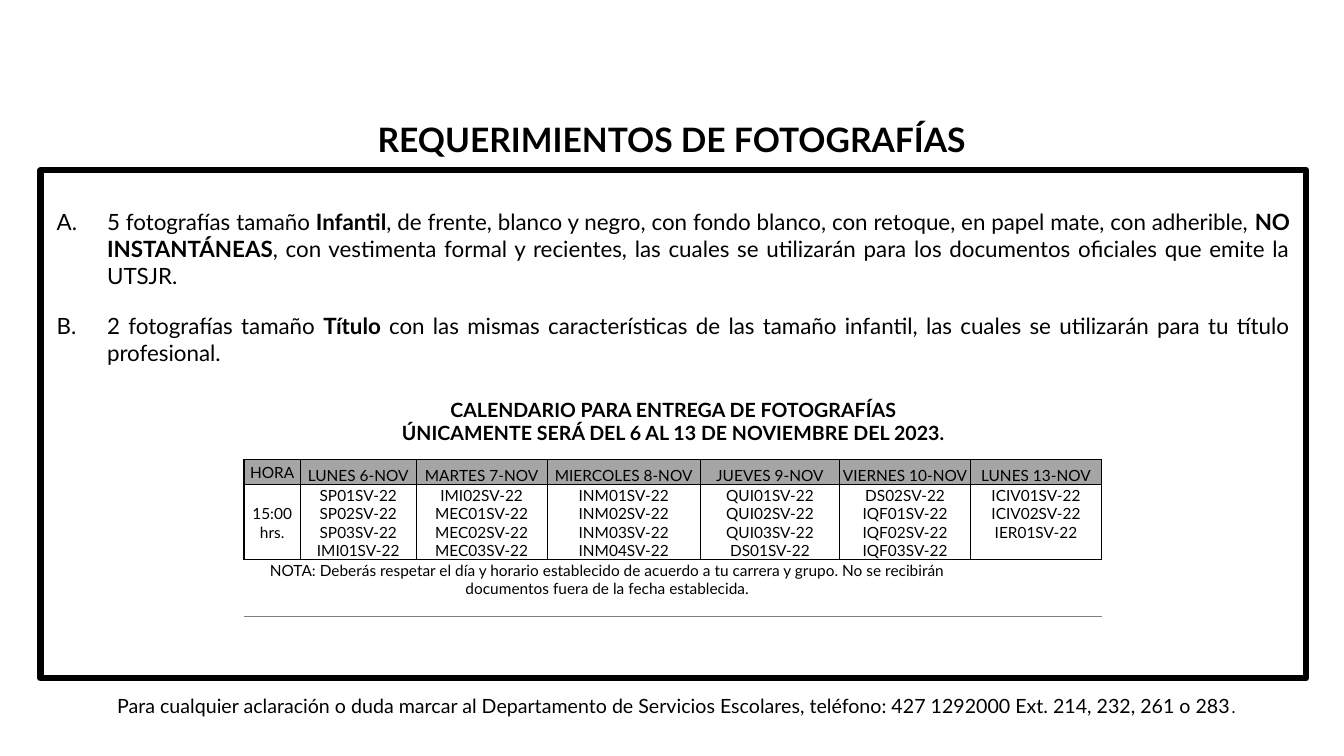
from dataclasses import dataclass

from lxml import etree
from pptx import Presentation
from pptx.dml.color import RGBColor
from pptx.enum.shapes import MSO_SHAPE
from pptx.enum.text import MSO_ANCHOR, PP_ALIGN
from pptx.oxml.ns import qn
from pptx.util import Cm, Pt

CENTER, JUSTIFY = PP_ALIGN.CENTER, PP_ALIGN.JUSTIFY
TOP, MIDDLE, BOTTOM = MSO_ANCHOR.TOP, MSO_ANCHOR.MIDDLE, MSO_ANCHOR.BOTTOM
RECTANGLE = MSO_SHAPE.RECTANGLE

FONT = "Lato"
COLORS = {"ink": "000000", "header": "A5A5A5", "rule": "7F7F7F"}


@dataclass
class Span:
    text: str
    bold: bool | None = None
    size: float | None = None


@dataclass
class Line:
    spans: list[Span]
    size: float
    align: PP_ALIGN = CENTER
    bold: bool = False
    before: float = 0
    number: int = 0
    spacing: float | None = None


@dataclass
class Border:
    side: str
    color: str | None
    width: float = 1


@dataclass
class Day:
    name: str
    groups: list[str]
    width: float


REQUIREMENTS = [
    Line([Span("5 fotografías tamaño"), Span(" Infantil", True),
          Span(", de frente, blanco y negro, con fondo blanco, con retoque, "
               "en papel mate, con adherible, "),
          Span("NO INSTANTÁNEAS", True),
          Span(", con vestimenta formal y recientes, las cuales se utilizarán "
               "para los documentos oficiales que emite la UTSJR.")],
         16, JUSTIFY, number=1),
    Line([Span("2 fotografías tamaño "), Span("Título ", True),
          Span("con las mismas características de las tamaño infantil, "
               "las cuales se utilizarán para tu título profesional.")],
         16, JUSTIFY, before=17, number=2),
    Line([Span("CALENDARIO PARA ENTREGA DE FOTOGRAFÍAS")], 14, bold=True, before=22.5),
    Line([Span("ÚNICAMENTE SERÁ DEL 6 AL 13 DE NOVIEMBRE DEL 2023.")], 14, bold=True),
]
TITLE = Line([Span("REQUERIMIENTOS DE FOTOGRAFÍAS")], 24, bold=True, spacing=0.9)
CONTACT = Line([Span("Para cualquier aclaración o duda marcar al Departamento de Servicios "
                     "Escolares, teléfono: 427 1292000 Ext. 214, 232, 261 o 283"),
                Span(".", size=12)], 14)
NOTE = ("NOTA: Deberás respetar el día y horario establecido de acuerdo a tu carrera "
        "y grupo. No se recibirán documentos fuera de la fecha establecida.")
HOUR_WIDTH = 1.42
ROW_HEIGHTS = [0.63, 1.89, 1.42]
DAYS = [
    Day("LUNES 6-NOV", ["SP01SV-22", "SP02SV-22", "SP03SV-22", "IMI01SV-22"], 2.92),
    Day("MARTES 7-NOV", ["IMI02SV-22", "MEC01SV-22", "MEC02SV-22", "MEC03SV-22"], 3.3),
    Day("MIERCOLES 8-NOV", ["INM01SV-22", "INM02SV-22", "INM03SV-22", "INM04SV-22"], 3.86),
    Day("JUEVES 9-NOV", ["QUI01SV-22", "QUI02SV-22", "QUI03SV-22", "DS01SV-22"], 3.51),
    Day("VIERNES 10-NOV", ["DS02SV-22", "IQF01SV-22", "IQF02SV-22", "IQF03SV-22"], 3.3),
    Day("LUNES 13-NOV", ["ICIV01SV-22", "ICIV02SV-22", "IER01SV-22"], 3.3),
]
GRID = [Border(side, "ink") for side in "LRTB"]
NOTE_BORDERS = [Border("L", None), Border("R", None),
                Border("T", "ink"), Border("B", "rule", 0.5)]


def rgb(name: str) -> RGBColor:
    return RGBColor.from_string(COLORS[name])


def write_lines(frame, lines: list[Line]) -> None:
    for index, line in enumerate(lines):
        para = frame.paragraphs[0] if index == 0 else frame.add_paragraph()
        if line.number:
            props = para._p.get_or_add_pPr()
            props.set("marL", str(Cm(1.27)))
            props.set("indent", str(-Cm(1.27)))
            etree.SubElement(props, qn("a:buFont"), typeface=FONT)
            etree.SubElement(props, qn("a:buAutoNum"), type="alphaUcPeriod",
                             startAt=str(line.number))
        para.alignment = line.align
        if line.before:
            para.space_before = Pt(line.before)
        if line.spacing:
            para.line_spacing = line.spacing
        para.font.name, para.font.size = FONT, Pt(line.size)
        para.font.bold = line.bold
        para.font.color.rgb = rgb("ink")
        for item in line.spans:
            span = para.add_run()
            span.text = item.text
            if item.bold:
                span.font.bold = True
            if item.size:
                span.font.size = Pt(item.size)


def add_text(page, left: float, top: float, width: float, height: float,
             line: Line, inset_top: float = 0.13) -> None:
    box = page.shapes.add_textbox(Cm(left), Cm(top), Cm(width), Cm(height))
    box.text_frame.word_wrap = True
    box.text_frame.margin_top = Cm(inset_top)
    write_lines(box.text_frame, [line])


def add_requirements(page) -> None:
    box = page.shapes.add_shape(RECTANGLE, Cm(1.02), Cm(4.29), Cm(31.9), Cm(12.8))
    box.shadow.inherit = False
    box.fill.background()
    box.line.color.rgb = rgb("ink")
    box.line.width = Pt(4.5)
    frame = box.text_frame
    frame.word_wrap = True
    frame.vertical_anchor = TOP
    frame.margin_left = frame.margin_right = Cm(0.41)
    frame.margin_top = Cm(0.95)
    write_lines(frame, REQUIREMENTS)


def set_borders(cell, borders: list[Border]) -> None:
    props = cell._tc.get_or_add_tcPr()
    for index, border in enumerate(borders):
        edge = etree.Element(qn(f"a:ln{border.side}"), w=str(Pt(border.width)))
        if border.color:
            fill = etree.SubElement(edge, qn("a:solidFill"))
            etree.SubElement(fill, qn("a:srgbClr"), val=COLORS[border.color])
        else:
            etree.SubElement(edge, qn("a:noFill"))
        props.insert(index, edge)


def fill_cell(cell, texts: list[str], anchor: MSO_ANCHOR, borders: list[Border],
              fill: str | None = None) -> None:
    cell.margin_left = cell.margin_right = cell.margin_top = Cm(0.03)
    cell.margin_bottom = 0
    cell.vertical_anchor = anchor
    if fill:
        cell.fill.solid()
        cell.fill.fore_color.rgb = rgb(fill)
    else:
        cell.fill.background()
    set_borders(cell, borders)
    write_lines(cell.text_frame, [Line([Span(text)], 11) for text in texts])


def add_calendar(page) -> None:
    widths = [HOUR_WIDTH] + [day.width for day in DAYS]
    table = page.shapes.add_table(len(ROW_HEIGHTS), len(widths), Cm(6.15), Cm(11.58),
                                  Cm(sum(widths)), Cm(sum(ROW_HEIGHTS))).table
    table.first_row = table.horz_banding = False
    for column, width in zip(table.columns, widths):
        column.width = Cm(width)
    for row, height in zip(table.rows, ROW_HEIGHTS):
        row.height = Cm(height)

    # Hour column, then one column per day
    fill_cell(table.cell(0, 0), ["HORA"], MIDDLE, GRID, "header")
    fill_cell(table.cell(1, 0), ["15:00 hrs."], MIDDLE, GRID)
    for index, day in enumerate(DAYS, start=1):
        fill_cell(table.cell(0, index), [day.name], BOTTOM, GRID, "header")
        fill_cell(table.cell(1, index), day.groups, TOP, GRID)

    # Note across every column but the last
    last = len(DAYS)
    for index in range(last + 1):
        fill_cell(table.cell(2, index), [NOTE] if index == 0 else [], TOP, NOTE_BORDERS)
    table.cell(2, 0).merge(table.cell(2, last - 1))


def main() -> None:
    deck = Presentation()
    deck.slide_width, deck.slide_height = Cm(33.87), Cm(19.05)
    page = deck.slides.add_slide(deck.slide_layouts[6])
    add_requirements(page)
    add_text(page, 3.4, 2.46, 27.05, 2.36, TITLE, inset_top=0.66)
    add_calendar(page)
    add_text(page, 0.94, 17.35, 32.21, 0.86, CONTACT)
    deck.save("out.pptx")


if __name__ == "__main__":
    main()
